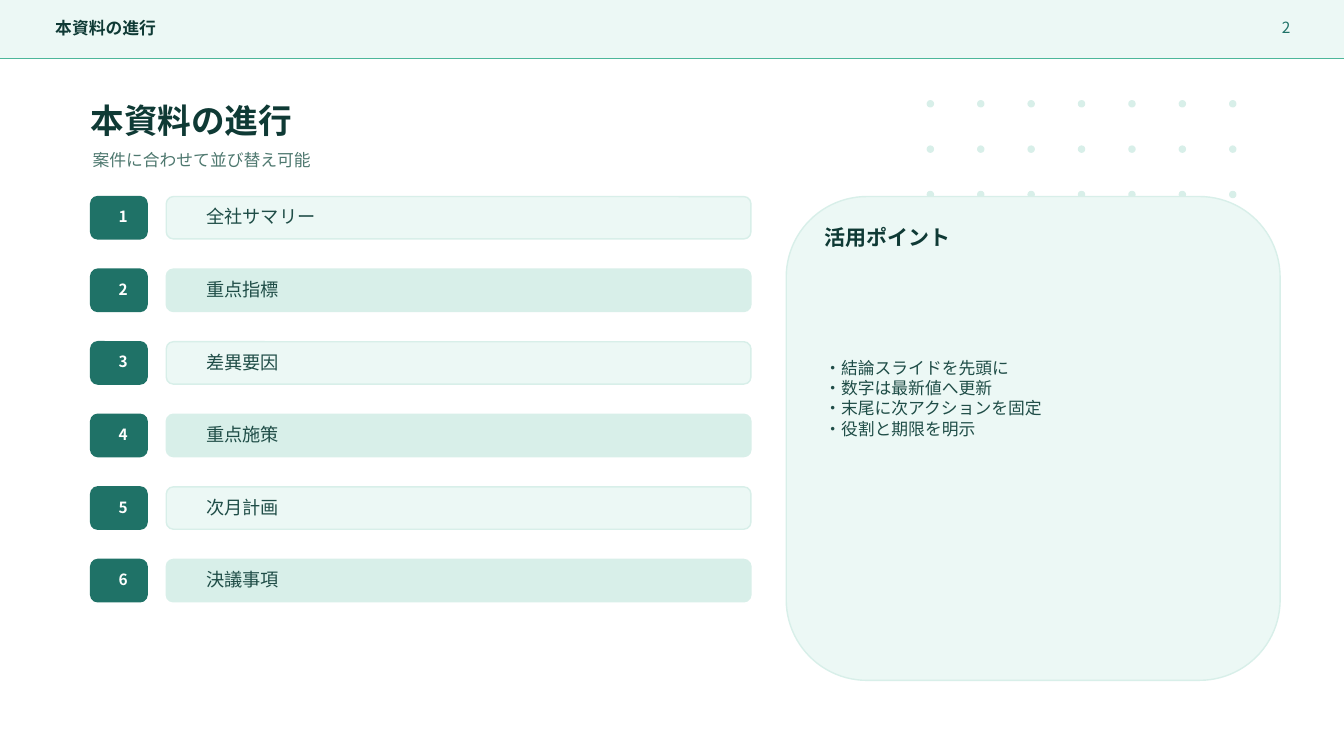
from collections import namedtuple
from lxml.etree import SubElement
from pptx import Presentation
from pptx.dml.color import RGBColor
from pptx.enum.shapes import MSO_CONNECTOR as Conn, MSO_SHAPE as Kind
from pptx.enum.text import MSO_ANCHOR as Anchor, PP_ALIGN as Align
from pptx.oxml.ns import qn
from pptx.util import Inches, Pt

# The grid has ten columns and ten rows to the inch.
COLS, ROWS = 133.33, 75
CELL = Inches(0.1)
SANS, HEAD = "Noto Sans CJK JP", "Cabin"
INK = {
    "white": "FFFFFF",
    "pale": "ECF8F5",
    "mint": "D8EFE9",
    "green": "4DB79A",
    "teal": "1F7267",
    "dark": "0F3A35",
    "body": "1F4D47",
    "muted": "4E786F",
}
TOPICS = ["全社サマリー", "重点指標", "差異要因", "重点施策", "次月計画", "決議事項"]
POINTS = [
    "・結論スライドを先頭に",
    "・数字は最新値へ更新",
    "・末尾に次アクションを固定",
    "・役割と期限を明示",
]

Box = namedtuple("Box", "x y w h")


def inner(box, x, y, w, h):
    """Return a box placed from the top left corner of another."""
    return Box(box.x + x, box.y + y, w, h)


def span(*cells):
    return [round(n * CELL) for n in cells]


def tone(name):
    return RGBColor.from_string(INK[name])


def add_form(slide, kind, box, fill, edge=None):
    form = slide.shapes.add_shape(kind, *span(*box))
    form.shadow.inherit = False
    form.fill.solid()
    form.fill.fore_color.rgb = tone(fill)
    form.line.color.rgb = tone(edge or fill)
    form.line.width = Pt(1)


def add_text(slide, box, lines, size, ink, bold=False, face=SANS, align=Align.LEFT):
    frame = slide.shapes.add_textbox(*span(*box)).text_frame
    frame.word_wrap = True
    frame.vertical_anchor = Anchor.MIDDLE
    form = {"name": face, "size": Pt(size), "bold": bold}
    for i, line in enumerate(lines):
        para = frame.add_paragraph() if i else frame.paragraphs[0]
        para.alignment = align
        run = para.add_run()
        run.text = line
        for key, value in form.items():
            setattr(run.font, key, value)
        run.font.color.rgb = tone(ink)


def add_dots(slide, box, cols=7, rows=3):
    dx, dy = box.w / cols, box.h / rows
    for row in range(rows):
        for col in range(cols):
            dot = inner(box, col * dx, row * dy, 0.6, 0.6)
            add_form(slide, Kind.OVAL, dot, "mint")


def add_header(slide, box, title, page):
    add_form(slide, Kind.RECTANGLE, box, "pale")
    base = box.y + box.h
    ends = span(box.x, base, box.x + box.w, base)
    rule = slide.shapes.add_connector(Conn.STRAIGHT, *ends)
    rule.line.color.rgb = tone("green")
    rule.line.width = Pt(1)
    SubElement(rule._element.spPr, qn("a:effectLst"))
    add_text(slide, inner(box, 4.5, 1.5, 93, 2.6), [title], 12, "dark", True)
    spot = inner(box, 122, 1.4, 7, 2.6)
    add_text(slide, spot, [page], 11, "teal", align=Align.RIGHT)


def add_title(slide, box, title, note):
    add_text(slide, inner(box, 0, 0, box.w, 4.8), [title], 24, "dark", True, HEAD)
    add_text(slide, inner(box, 0.2, 4.9, box.w - 2, 3), [note], 12, "muted")


def add_agenda(slide, box, topics):
    step = box.h / len(topics)
    for i, topic in enumerate(topics):
        row = inner(box, 0, i * step, box.w, 4.2)
        add_form(slide, Kind.ROUNDED_RECTANGLE, inner(row, 0, 0, 5.6, row.h), "teal")
        spot = inner(row, 1.8, 1, 2, 2)
        add_text(slide, spot, [str(i + 1)], 11, "white", True, align=Align.CENTER)
        bar = inner(row, 7.5, 0, row.w - 7.5, row.h)
        fill = "mint" if i % 2 else "pale"
        add_form(slide, Kind.ROUNDED_RECTANGLE, bar, fill, "mint")
        add_text(slide, inner(bar, 3, 1, bar.w - 6, 2), [topic], 13, "body")


def add_panel(slide, box, title, points):
    add_form(slide, Kind.ROUNDED_RECTANGLE, box, "pale", "mint")
    add_text(slide, inner(box, 2.8, 2.5, 41, 3), [title], 15, "dark", True)
    add_text(slide, inner(box, 2.8, 7.5, 42, 25), points, 12, "body")


def main():
    deck = Presentation()
    deck.slide_width, deck.slide_height = span(COLS, ROWS)
    slide = deck.slides.add_slide(deck.slide_layouts[6])
    slide.background.fill.solid()
    slide.background.fill.fore_color.rgb = tone("white")
    title = "本資料の進行"
    add_dots(slide, Box(92, 10, 35, 13.5))
    add_header(slide, Box(0, 0, COLS, 5.8), title, "2")
    add_title(slide, Box(8, 9.5, 114, 7.9), title, "案件に合わせて並び替え可能")
    add_agenda(slide, Box(9, 19.5, 65.5, 43.2), TOPICS)
    add_panel(slide, Box(78, 19.5, 49, 48), "活用ポイント", POINTS)
    deck.save("out.pptx")


if __name__ == "__main__":
    main()
